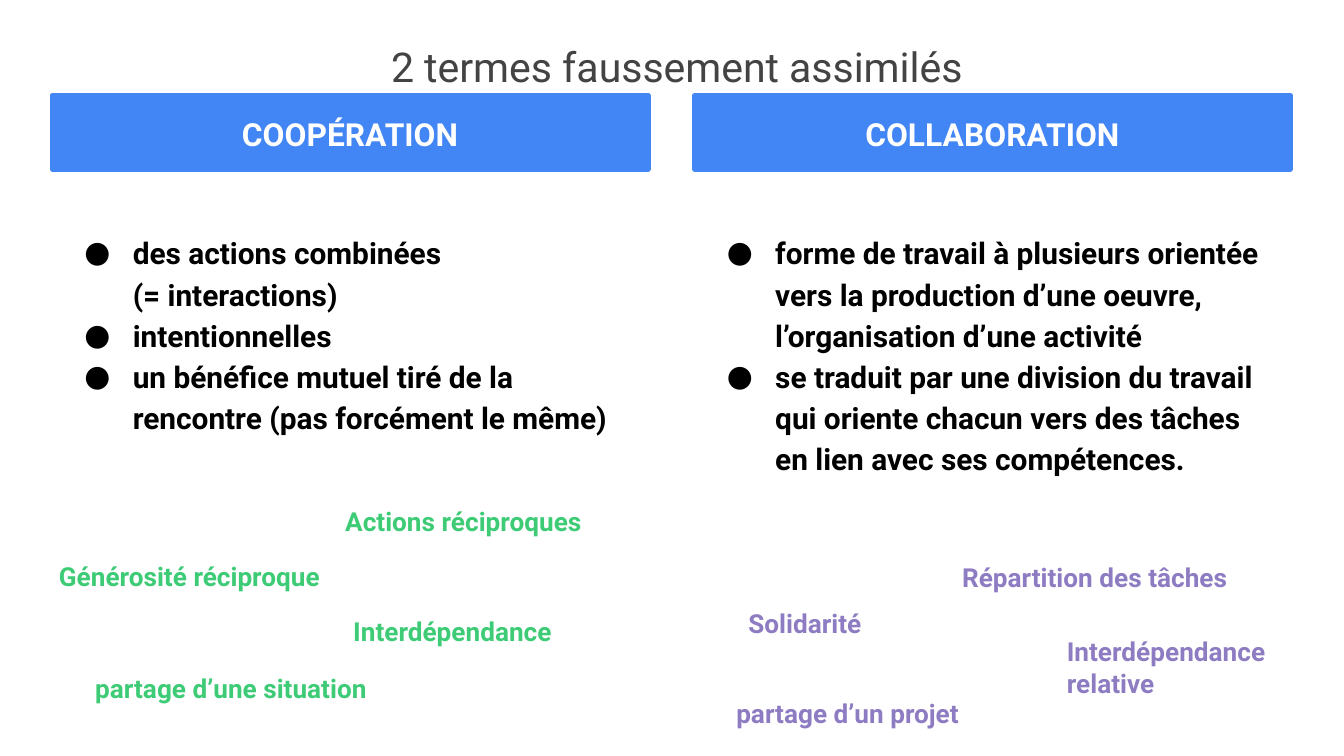
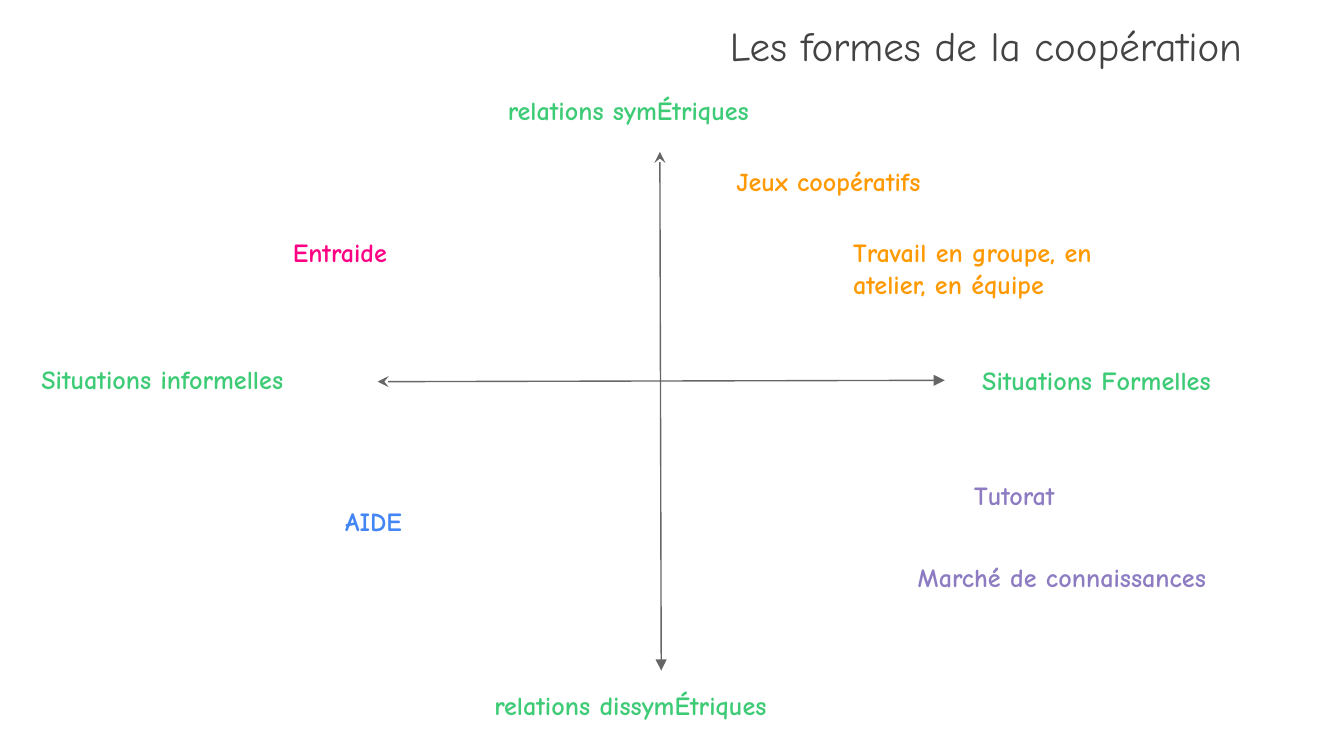
from dataclasses import dataclass

from lxml import etree
from pptx import Presentation
from pptx.dml.color import RGBColor
from pptx.enum.shapes import MSO_CONNECTOR, MSO_SHAPE
from pptx.enum.text import MSO_ANCHOR, MSO_AUTO_SIZE, PP_ALIGN
from pptx.oxml.ns import qn
from pptx.slide import Slide
from pptx.text.text import TextFrame, _Paragraph
from pptx.util import Emu, Inches, Pt

RECTANGLE = MSO_SHAPE.RECTANGLE
STRAIGHT = MSO_CONNECTOR.STRAIGHT
TOP = MSO_ANCHOR.TOP
NO_AUTOFIT = MSO_AUTO_SIZE.NONE
LEFT = PP_ALIGN.LEFT
CENTER = PP_ALIGN.CENTER

COLORS = {
    "title": "434343",
    "text": "000000",
    "white": "FFFFFF",
    "blue": "4285F4",
    "green": "3DCB76",
    "purple": "8E7CC3",
    "orange": "FF9900",
    "pink": "FF0084",
    "axis": "666666",
}
PLAIN_FONT = "Roboto"
HAND_FONT = "Comic Neue"

SLIDE_WIDTH = Inches(10)
SLIDE_HEIGHT = Emu(SLIDE_WIDTH * 9 // 16)
GRID_COLUMNS = 100
GRID_ROWS = GRID_COLUMNS * 9 / 16
TITLE_ONLY_LAYOUT = 5
LINE_SPACING = 1.15
LABEL_ROWS = 4.1
PANEL_COLUMNS = 44.3
PANEL_LEFTS = (3.9, 51.7)
BAND_TOP, BAND_ROWS = 7.1, 5.5
CARD_TOP = 16.1
BULLET_MARGIN = Inches(0.5)
BULLET_INDENT = Inches(-0.36)


@dataclass(frozen=True)
class Area:
    left: float
    top: float
    columns: float
    rows: float

    def box(self) -> tuple[Emu, Emu, Emu, Emu]:
        return across(self.left), down(self.top), across(self.columns), down(self.rows)


@dataclass(frozen=True)
class TextStyle:
    font: str
    size: int
    color: str
    bold: bool = True


@dataclass(frozen=True)
class Label:
    text: str
    left: float
    top: float
    columns: float
    color: str


@dataclass(frozen=True)
class Line:
    text: str
    bullet: bool = True


@dataclass(frozen=True)
class Panel:
    heading: str
    card_rows: float
    lines: tuple[Line, ...]


@dataclass(frozen=True)
class Axis:
    start: tuple[float, float]
    end: tuple[float, float]


PANELS = (
    Panel("COOPÉRATION", 18, (
        Line("des actions combinées"),
        Line("(= interactions)", bullet=False),
        Line("intentionnelles"),
        Line("un bénéfice mutuel tiré de la rencontre (pas forcément le même)"),
    )),
    Panel("COLLABORATION", 23.3, (
        Line("forme de travail à plusieurs orientée vers la production d’une oeuvre, "
             "l’organisation d’une activité"),
        Line("se traduit par une division du travail qui oriente chacun vers des tâches "
             "en lien avec ses compétences."),
    )),
)

TERM_LABELS = (
    Label("Générosité réciproque", 3.4, 40.7, 28.2, "green"),
    Label("Actions réciproques", 24.7, 36.6, 22.9, "green"),
    Label("partage d’une situation", 6.1, 49, 24.8, "green"),
    Label("Interdépendance", 25.3, 44.8, 22.9, "green"),
    Label("Solidarité", 54.7, 44.2, 13.4, "purple"),
    Label("Répartition des tâches", 70.6, 40.8, 24.8, "purple"),
    Label("partage d’un projet", 53.8, 50.9, 22.9, "purple"),
    Label("Interdépendance relative", 78.4, 46.3, 21.6, "purple"),
)

AXES = (
    Axis((28.1, 28.4), (70.3, 28.3)),
    Axis((49.1, 11.3), (49.2, 49.9)),
)

FORM_LABELS = (
    Label("Jeux coopératifs", 53.8, 11.3, 19.2, "orange"),
    Label("AIDE", 24.7, 36.6, 7, "blue"),
    Label("Travail en groupe, en atelier, en équipe", 62.5, 16.6, 24, "orange"),
    Label("Tutorat", 71.5, 34.7, 11.6, "purple"),
    Label("Marché de connaissances", 67.3, 40.8, 26.7, "purple"),
    Label("Entraide", 20.8, 16.6, 10.9, "pink"),
    Label("relations symÉtriques", 36.8, 6, 24.8, "green"),
    Label("relations dissymÉtriques", 35.8, 50.3, 26.7, "green"),
    Label("Situations informelles", 2.1, 26, 24.8, "green"),
    Label("Situations Formelles", 72.1, 26.1, 24.8, "green"),
)


def across(columns: float) -> Emu:
    return Emu(round(SLIDE_WIDTH * columns / GRID_COLUMNS))


def down(rows: float) -> Emu:
    return Emu(round(SLIDE_HEIGHT * rows / GRID_ROWS))


def rgb(color: str) -> RGBColor:
    return RGBColor.from_string(COLORS[color])


def prepare_frame(frame: TextFrame) -> None:
    frame.word_wrap = True
    frame.auto_size = NO_AUTOFIT
    frame.vertical_anchor = TOP
    frame.margin_left = frame.margin_right = Inches(0.1)
    frame.margin_top = frame.margin_bottom = Inches(0.1)


def add_text(paragraph: _Paragraph, text: str, style: TextStyle,
             alignment: PP_ALIGN = LEFT, spacing: float = LINE_SPACING) -> None:
    paragraph.alignment = alignment
    paragraph.line_spacing = spacing
    run = paragraph.add_run()
    run.text = text
    run.font.name = style.font
    run.font.size = Pt(style.size)
    run.font.bold = style.bold
    run.font.color.rgb = rgb(style.color)


def add_bullet(paragraph: _Paragraph) -> None:
    properties = paragraph._p.get_or_add_pPr()
    properties.set("indent", str(BULLET_INDENT))
    bullet_color = etree.SubElement(properties, qn("a:buClr"))
    etree.SubElement(bullet_color, qn("a:srgbClr"), val=COLORS["text"])
    etree.SubElement(properties, qn("a:buFont"), typeface=PLAIN_FONT)
    etree.SubElement(properties, qn("a:buChar"), char="●")


def add_titled_slide(presentation: Presentation, title: str, area: Area, font: str) -> Slide:
    slide = presentation.slides.add_slide(presentation.slide_layouts[TITLE_ONLY_LAYOUT])
    shape = slide.shapes.title
    shape.left, shape.top, shape.width, shape.height = area.box()
    prepare_frame(shape.text_frame)
    paragraph = shape.text_frame.paragraphs[0]
    add_text(paragraph, title, TextStyle(font, 22, "title", bold=False))
    paragraph.space_after = Pt(16)
    return slide


def add_block(slide: Slide, area: Area, color: str) -> TextFrame:
    shape = slide.shapes.add_shape(RECTANGLE, *area.box())
    shape.shadow.inherit = False
    shape.fill.solid()
    shape.fill.fore_color.rgb = rgb(color)
    shape.line.color.rgb = rgb(color)
    shape.line.width = Pt(3)
    prepare_frame(shape.text_frame)
    return shape.text_frame


def add_panel(slide: Slide, panel: Panel, left: float) -> None:
    card = add_block(slide, Area(left, CARD_TOP, PANEL_COLUMNS, panel.card_rows), "white")
    for index, line in enumerate(panel.lines):
        paragraph = card.add_paragraph() if index else card.paragraphs[0]
        properties = paragraph._p.get_or_add_pPr()
        properties.set("marL", str(BULLET_MARGIN))
        if line.bullet:
            add_bullet(paragraph)
        add_text(paragraph, line.text, TextStyle(PLAIN_FONT, 16, "text"))
    band = add_block(slide, Area(left, BAND_TOP, PANEL_COLUMNS, BAND_ROWS), "blue")
    add_text(band.paragraphs[0], panel.heading, TextStyle(PLAIN_FONT, 17, "white"), CENTER)


def add_label(slide: Slide, label: Label, font: str) -> None:
    area = Area(label.left, label.top, label.columns, LABEL_ROWS)
    frame = slide.shapes.add_textbox(*area.box()).text_frame
    prepare_frame(frame)
    add_text(frame.paragraphs[0], label.text, TextStyle(font, 14, label.color), spacing=1.0)


def add_axis(slide: Slide, axis: Axis) -> None:
    connector = slide.shapes.add_connector(
        STRAIGHT, across(axis.start[0]), down(axis.start[1]),
        across(axis.end[0]), down(axis.end[1]))
    connector.line.color.rgb = rgb("axis")
    connector.line.width = Pt(0.75)
    outline = connector.line._get_or_add_ln()
    for tag, arrow in (("a:headEnd", "stealth"), ("a:tailEnd", "triangle")):
        etree.SubElement(outline, qn(tag), type=arrow, w="med", len="med")
    etree.SubElement(connector._element.spPr, qn("a:effectLst"))


def build_terms_slide(presentation: Presentation) -> None:
    slide = add_titled_slide(presentation, "2 termes faussement assimilés",
                             Area(28.1, 1.5, 50.3, 6.3), PLAIN_FONT)
    for panel, left in zip(PANELS, PANEL_LEFTS):
        add_panel(slide, panel, left)
    for label in TERM_LABELS:
        add_label(slide, label, PLAIN_FONT)


def build_forms_slide(presentation: Presentation) -> None:
    slide = add_titled_slide(presentation, "Les formes de la coopération",
                             Area(53.3, 0, 46.7, 6.3), HAND_FONT)
    for axis in AXES:
        add_axis(slide, axis)
    for label in FORM_LABELS:
        add_label(slide, label, HAND_FONT)


def main() -> None:
    presentation = Presentation()
    presentation.slide_width = SLIDE_WIDTH
    presentation.slide_height = SLIDE_HEIGHT
    build_terms_slide(presentation)
    build_forms_slide(presentation)
    presentation.save("out.pptx")


if __name__ == "__main__":
    main()
